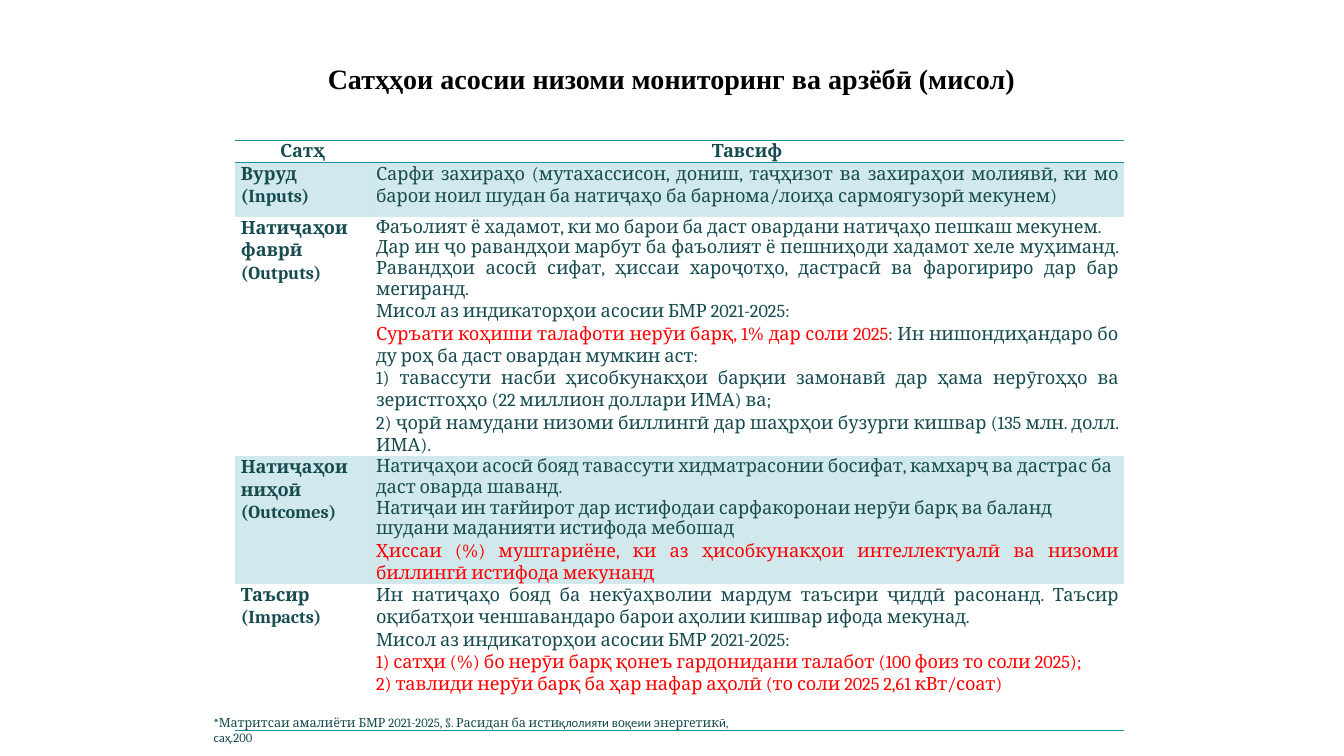
from dataclasses import dataclass

from lxml.etree import SubElement
from pptx import Presentation
from pptx.dml.color import RGBColor
from pptx.enum.text import MSO_ANCHOR, MSO_AUTO_SIZE, PP_ALIGN
from pptx.oxml import parse_xml
from pptx.oxml.ns import nsdecls, qn
from pptx.util import Inches, Pt


@dataclass(frozen=True)
class Theme:
    black: str = "000000"
    text: str = "164B4F"
    example: str = "FF0000"
    accent: str = "1B91A1"
    title_font: str = "Times New Roman"
    table_font: str = "Cambria"
    note_font: str = "Calibri"
    title_size: int = 20
    table_size: int = 13
    note_size: int = 9
    table_spacing: float = 1.07
    plain_table_style: str = "{2D5ABB26-0587-4C30-8999-92F81FD0307C}"


THEME = Theme()
TITLE = "Сатҳҳои асосии низоми мониторинг ва арзёбӣ (мисол)"
HEADERS = ["Сатҳ", "Тавсиф"]
COLUMN_WIDTHS = [1.34, 7.48]
ROW_HEIGHTS = [0.18, 0.54, 1.87, 1.01, 1.45]

JUSTIFIED = {"align": PP_ALIGN.JUSTIFY, "spacing": THEME.table_spacing}
TIGHT = {"align": PP_ALIGN.JUSTIFY}
LEFT = {"align": PP_ALIGN.LEFT}
EXAMPLE = {**JUSTIFIED, "color": THEME.example}

LEVELS = [
    ("Вуруд (Inputs)", [
        ("Сарфи захираҳо (мутахассисон, дониш, таҷҳизот ва захираҳои молиявӣ, ки мо барои ноил шудан ба натиҷаҳо ба барнома/лоиҳа сармоягузорӣ мекунем)", JUSTIFIED),
    ]),
    ("Натиҷаҳои фаврӣ (Outputs)", [
        ("Фаъолият ё хадамот, ки мо барои ба даст овардани натиҷаҳо пешкаш мекунем.", TIGHT),
        ("Дар ин ҷо равандҳои марбут ба фаъолият ё пешниҳоди хадамот хеле муҳиманд. Равандҳои асосӣ сифат, ҳиссаи хароҷотҳо, дастрасӣ ва фарогириро дар бар мегиранд.", TIGHT),
        ("Мисол аз индикаторҳои асосии БМР 2021-2025:", JUSTIFIED),
        ([("Суръати коҳиши талафоти нерӯи барқ, 1% дар соли 2025", {"color": THEME.example}),
          (": Ин нишондиҳандаро бо ду роҳ ба даст овардан мумкин аст:", {})], JUSTIFIED),
        ("1) тавассути насби ҳисобкунакҳои барқии замонавӣ дар ҳама нерӯгоҳҳо ва зеристгоҳҳо (22 миллион доллари ИМА) ва;", JUSTIFIED),
        ("2) ҷорӣ намудани низоми биллингӣ дар шаҳрҳои бузурги кишвар (135 млн. долл. ИМА).", JUSTIFIED),
    ]),
    ("Натиҷаҳои ниҳоӣ (Outcomes)", [
        ("Натиҷаҳои асосӣ бояд тавассути хидматрасонии босифат, камхарҷ ва дастрас ба даст оварда шаванд.", LEFT),
        ("Натиҷаи ин тағйирот дар истифодаи сарфакоронаи нерӯи барқ ва баланд шудани маданияти истифода мебошад", LEFT),
        ("Ҳиссаи (%) муштариёне, ки аз ҳисобкунакҳои интеллектуалӣ ва низоми биллингӣ истифода мекунанд", EXAMPLE),
    ]),
    ("Таъсир (Impacts)", [
        ("Ин натиҷаҳо бояд ба некӯаҳволии мардум таъсири ҷиддӣ расонанд. Таъсир оқибатҳои ченшавандаро барои аҳолии кишвар ифода мекунад.", JUSTIFIED),
        ("Мисол аз индикаторҳои асосии БМР 2021-2025:", JUSTIFIED),
        ("1) сатҳи (%) бо нерӯи барқ қонеъ гардонидани талабот (100 фоиз то соли 2025);", EXAMPLE),
        ("2) тавлиди нерӯи барқ ба ҳар нафар аҳолӣ (то соли 2025 2,61 кВт/соат)", EXAMPLE),
    ]),
]

NOTE_PARTS = [
    "*Матритсаи амалиёти БМР 2021-2025, §. Расидан ба исти", "қлолияти в", "о", "қеии",
    " энергетик", "ӣ", ", ", "саҳ", ".200",
]
NOTE_FONTS = [THEME.table_font, THEME.note_font]
NOTE = [(part, {"font": NOTE_FONTS[index % 2]}) for index, part in enumerate(NOTE_PARTS)]


def write(paragraph, text, *, size=THEME.table_size, font=THEME.table_font,
          color=THEME.text, bold=False, align=PP_ALIGN.LEFT, spacing=1.0):
    paragraph.alignment = align
    paragraph.line_spacing = spacing
    base = {"font": font, "color": color}
    runs = [(text, {})] if isinstance(text, str) else text
    for run_text, changes in runs:
        look = {**base, **changes}
        run = paragraph.add_run()
        run.text = run_text
        run.font.size = Pt(size)
        run.font.bold = bold
        run.font.name = look["font"]
        run.font.color.rgb = RGBColor.from_string(look["color"])


def format_cell(cell, shaded, edges):
    cell.margin_left = cell.margin_right = Inches(0.06)
    cell.margin_top = cell.margin_bottom = 0
    if shaded:
        cell.fill.solid()
        cell.fill.fore_color.rgb = RGBColor.from_string(THEME.accent)
    else:
        cell.fill.background()
    properties = cell._tc.get_or_add_tcPr()
    for color in properties.iter(qn("a:srgbClr")):
        SubElement(color, qn("a:alpha"), val="20000")
    for edge in reversed(edges):
        properties.insert(0, parse_xml(
            f'<a:{edge} {nsdecls("a")} w="{Pt(1)}"><a:solidFill>'
            f'<a:srgbClr val="{THEME.accent}"/></a:solidFill></a:{edge}>'))


def add_title(slide):
    title = slide.shapes.title
    title.left, title.top = Inches(1.41), Inches(0.42)
    title.width, title.height = Inches(10.5), Inches(0.58)
    title.text_frame.vertical_anchor = MSO_ANCHOR.BOTTOM
    write(title.text_frame.paragraphs[0], TITLE, size=THEME.title_size, font=THEME.title_font,
          color=THEME.black, bold=True, align=PP_ALIGN.CENTER, spacing=0.9)


def add_levels_table(slide):
    shape = slide.shapes.add_table(
        len(ROW_HEIGHTS), len(COLUMN_WIDTHS), Inches(2.33), Inches(1.39),
        Inches(sum(COLUMN_WIDTHS)), Inches(sum(ROW_HEIGHTS)))
    table = shape.table
    table.first_row = table.horz_banding = False
    table._tbl.tblPr.find(qn("a:tableStyleId")).text = THEME.plain_table_style
    for column, width in zip(table.columns, COLUMN_WIDTHS):
        column.width = Inches(width)
    for row, height in zip(table.rows, ROW_HEIGHTS):
        row.height = Inches(height)

    heading = {"align": PP_ALIGN.CENTER, "spacing": THEME.table_spacing, "bold": True}
    rows = [[[(header, heading)] for header in HEADERS]]
    rows += [[[(label, {**JUSTIFIED, "bold": True})], details] for label, details in LEVELS]
    borders = {0: ["lnT", "lnB"], len(rows) - 1: ["lnB"]}
    for row_index, row in enumerate(rows):
        for column_index, paragraphs in enumerate(row):
            cell = table.cell(row_index, column_index)
            format_cell(cell, row_index % 2 == 1, borders.get(row_index, []))
            frame = cell.text_frame
            for index, (text, style) in enumerate(paragraphs):
                paragraph = frame.add_paragraph() if index else frame.paragraphs[0]
                write(paragraph, text, **style)


def add_note(slide):
    box = slide.shapes.add_textbox(Inches(2.02), Inches(7.12), Inches(5.54), Inches(0.25))
    frame = box.text_frame
    frame.word_wrap = True
    frame.auto_size = MSO_AUTO_SIZE.SHAPE_TO_FIT_TEXT
    frame.vertical_anchor = MSO_ANCHOR.MIDDLE
    write(frame.paragraphs[0], NOTE, size=THEME.note_size)


def main():
    presentation = Presentation()
    presentation.slide_width, presentation.slide_height = Inches(13.33), Inches(7.5)
    slide = presentation.slides.add_slide(presentation.slide_layouts[5])
    add_title(slide)
    add_levels_table(slide)
    add_note(slide)
    presentation.save("out.pptx")


if __name__ == "__main__":
    main()
